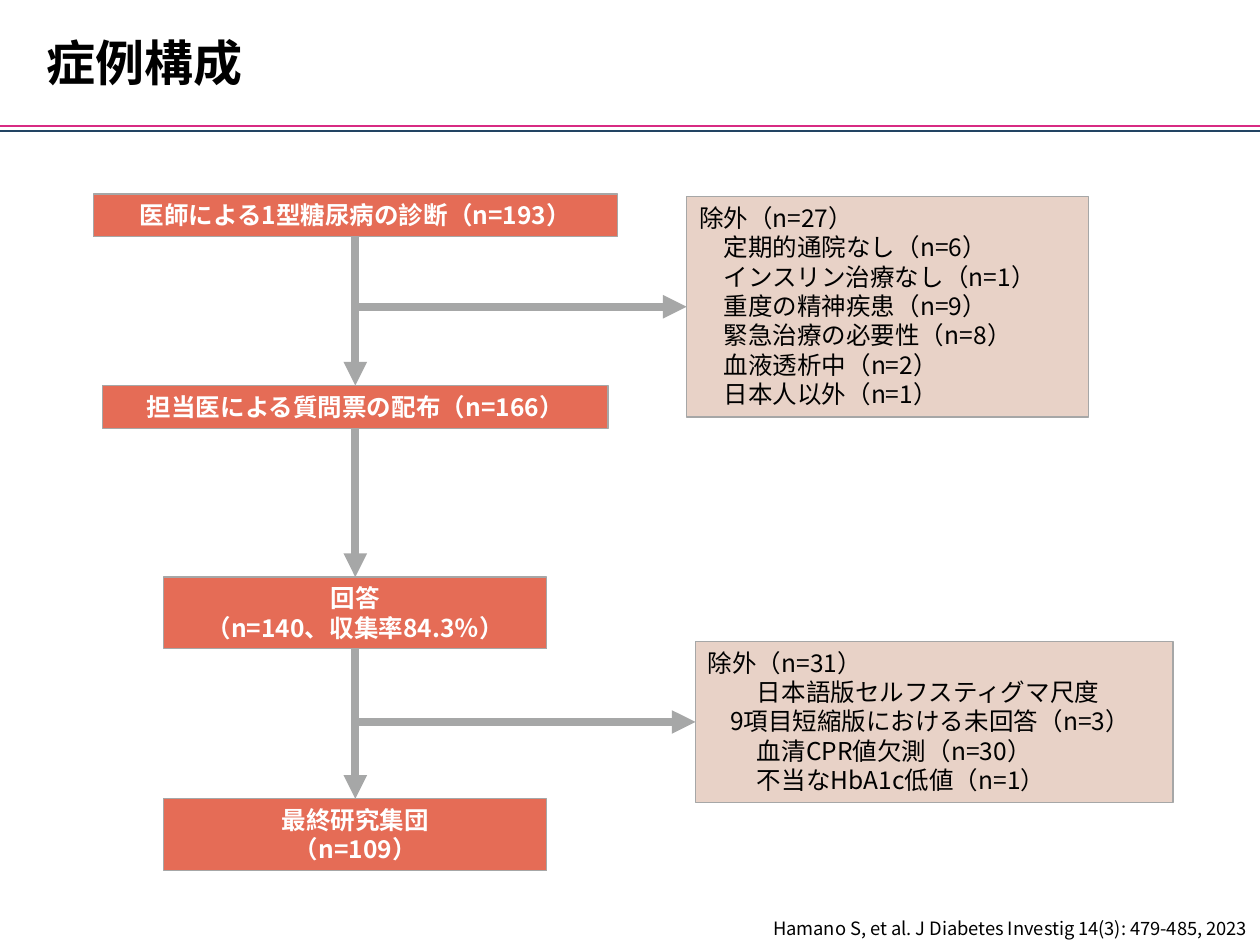
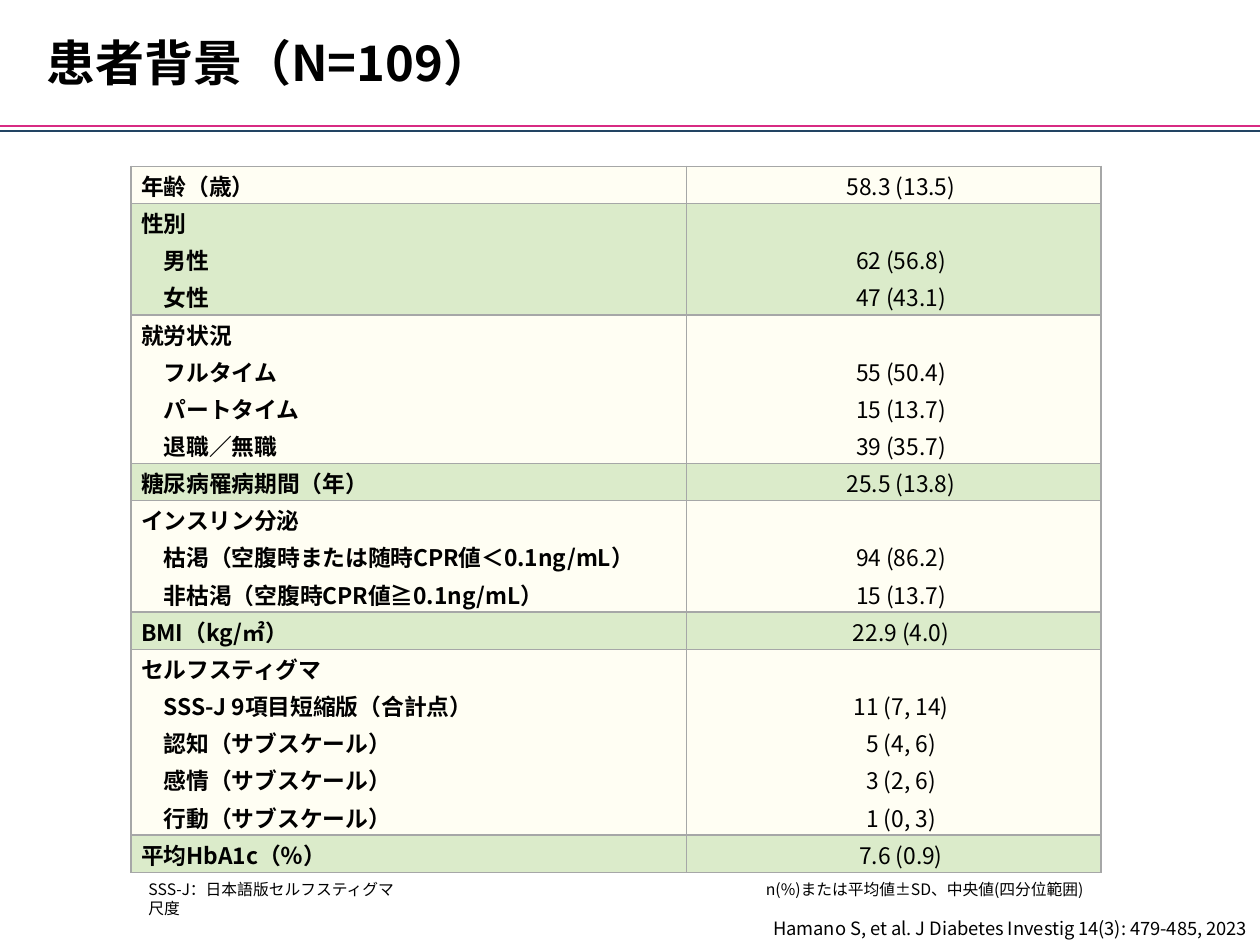
from lxml.etree import SubElement
from pptx import Presentation
from pptx.dml.color import RGBColor
from pptx.enum.shapes import MSO_CONNECTOR, MSO_SHAPE
from pptx.enum.text import MSO_ANCHOR, MSO_AUTO_SIZE, PP_ALIGN
from pptx.oxml.ns import qn
from pptx.util import Emu, Inches, Pt

# ---- Shared style ----
FONT = "Noto Sans CJK JP"
C = {"text": "000000", "white": "FFFFFF", "pink": "D82B83", "navy": "224463",
     "gray": "A6A7A7", "step": "E56C56", "excluded": "E8D2C7",
     "cream": "FFFEF3", "green": "DBEBCA"}
W, H = 10, 7.5
RULES = [(1.04, "navy"), (1, "pink")]
CITATION = "Hamano S, et al. J Diabetes Investig 14(3): 479-485, 2023"
TOP, LEFT, BOTTOM = 0, 1, 2  # connection sites

# ---- Slide 1: patient flow ----
FLOW_TITLE = ("症例構成", 1.77)
AXIS = 2.82  # centre of the flow column
STEPS = [  # top, width, height, lines
    (1.54, 4.16, 0.34, ["医師による1型糖尿病の診断（n=193）"]),
    (3.06, 4.01, 0.34, ["担当医による質問票の配布（n=166）"]),
    (4.58, 3.04, 0.57, ["回答", "（n=140、収集率84.3％）"]),
    (6.34, 3.04, 0.57, ["最終研究集団", "（n=109）"]),
]
EXCLUSIONS = [  # step left, box, (line, indent in characters)
    (0, (5.45, 1.56, 3.19, 1.75), [
        ("除外（n=27）", 0), ("定期的通院なし（n=6）", 1),
        ("インスリン治療なし（n=1）", 1), ("重度の精神疾患（n=9）", 1),
        ("緊急治療の必要性（n=8）", 1), ("血液透析中（n=2）", 1),
        ("日本人以外（n=1）", 1)]),
    (2, (5.52, 5.09, 3.79, 1.28), [
        ("除外（n=31）", 0), ("日本語版セルフスティグマ尺度", 2),
        ("9項目短縮版における未回答（n=3）", 0.9),
        ("血清CPR値欠測（n=30）", 2), ("不当なHbA1c低値（n=1）", 2)]),
]

# ---- Slide 2: patient background ----
TABLE_TITLE = ("患者背景（N=109）", 4)
GROUPS = [  # the first row of each group is its heading
    [("年齢（歳）", "58.3 (13.5)")],
    [("性別", ""), ("男性", "62 (56.8)"), ("女性", "47 (43.1)")],
    [("就労状況", ""), ("フルタイム", "55 (50.4)"),
     ("パートタイム", "15 (13.7)"), ("退職／無職", "39 (35.7)")],
    [("糖尿病罹病期間（年）", "25.5 (13.8)")],
    [("インスリン分泌", ""),
     ("枯渇（空腹時または随時CPR値＜0.1ng/mL）", "94 (86.2)"),
     ("非枯渇（空腹時CPR値≧0.1ng/mL）", "15 (13.7)")],
    [("BMI（kg/㎡）", "22.9 (4.0)")],
    [("セルフスティグマ", ""), ("SSS-J 9項目短縮版（合計点）", "11 (7, 14)"),
     ("認知（サブスケール）", "5 (4, 6)"), ("感情（サブスケール）", "3 (2, 6)"),
     ("行動（サブスケール）", "1 (0, 3)")],
    [("平均HbA1c（％）", "7.6 (0.9)")],
]
TABLE_BOX = (1.04, 1.32, 7.7, 5.61)
COLS = (4.41, 3.29)
NOTES = [  # left, width, text
    (5.98, 2.75, "n(%)または平均値±SD、中央値(四分位範囲)"),
    (1.08, 2.19, "SSS-J：日本語版セルフスティグマ尺度"),
]


def rgb(name):
    return RGBColor.from_string(C[name])


def write(tf, lines, size, color="text", bold=False, align=PP_ALIGN.LEFT):
    """Fill a text frame with (text, indent in characters) lines."""
    for i, (text, indent) in enumerate(lines):
        p = tf.paragraphs[0] if i == 0 else tf.add_paragraph()
        p.alignment = align
        if text:
            p.add_run().text = text
        else:
            p._p.get_or_add_endParaRPr().set("sz", str(size * 100))
        f = p.font
        f.size, f.bold, f.name = Pt(size), bold, FONT
        f.color.rgb = rgb(color)
        SubElement(f._element, qn("a:ea")).set("typeface", FONT)
        if indent:
            p._p.get_or_add_pPr().set("marL", str(Pt(size * indent)))
            p._p.pPr.set("indent", "0")


def add_text(s, box, text, size, anchor=MSO_ANCHOR.TOP, wrap=True, **style):
    tf = s.shapes.add_textbox(*map(Inches, box)).text_frame
    tf.word_wrap, tf.vertical_anchor = wrap, anchor
    write(tf, [(text, 0)], size, **style)


def add_box(s, box, fill, lines, **style):
    sp = s.shapes.add_shape(MSO_SHAPE.RECTANGLE, *map(Inches, box))
    sp.shadow.inherit = False
    sp.fill.solid()
    sp.fill.fore_color.rgb = rgb(fill)
    sp.line.color.rgb, sp.line.width = rgb("gray"), Pt(0.75)
    tf = sp.text_frame
    tf.word_wrap, tf.vertical_anchor = True, MSO_ANCHOR.TOP
    tf.auto_size = MSO_AUTO_SIZE.SHAPE_TO_FIT_TEXT
    write(tf, lines, 14, **style)
    return sp


def add_line(s, ends, color, width, kind=MSO_CONNECTOR.STRAIGHT):
    ln = s.shapes.add_connector(kind, *map(Inches, ends))
    ln.line.color.rgb, ln.line.width = rgb(color), Pt(width)
    SubElement(ln._element.spPr, qn("a:effectLst"))
    return ln


def add_arrow(s, source, target, site, kind=MSO_CONNECTOR.STRAIGHT):
    ln = add_line(s, (0, 0, 1, 1), "gray", 4.5, kind)
    SubElement(ln.line._get_or_add_ln(), qn("a:tailEnd")).set("type", "triangle")
    ln.begin_connect(source, BOTTOM)
    ln.end_connect(target, site)
    return ln


def add_branch(s, source, target):
    """One-bend arrow: down from source, then right into target."""
    ln = add_arrow(s, source, target, LEFT, MSO_CONNECTOR.ELBOW)
    x, y = ln.begin_x, ln.begin_y
    dx, dy = ln.end_x - x, ln.end_y - y
    # The one-bend preset is laid out on its side and turned by 270 degrees
    ln.left, ln.top = Emu(x + (dx - dy) // 2), Emu(y + (dy - dx) // 2)
    ln.width, ln.height = Emu(dy), Emu(dx)
    xfrm = ln._element.spPr.find(qn("a:xfrm"))
    xfrm.set("rot", str(270 * 60000))
    xfrm.set("flipH", "1")
    ln._element.spPr.find(qn("a:prstGeom")).set("prst", "bentConnector2")


def new_slide(prs, title, title_width):
    s = prs.slides.add_slide(prs.slide_layouts[6])
    for y, color in RULES:
        add_line(s, (0, y, W, y), color, 1.5)
    add_text(s, (0.27, 0.21, title_width, 0.57), title, 28,
             MSO_ANCHOR.MIDDLE, wrap=False, bold=True)
    add_text(s, (4.89, H - 0.28, W - 4.89, 0.28), CITATION, 10.5,
             MSO_ANCHOR.BOTTOM, align=PP_ALIGN.RIGHT)
    return s


def set_borders(cell, sides):
    """Draw the named sides (L, R, T, B) and clear the others."""
    tcPr = cell._tc.get_or_add_tcPr()
    for i, side in enumerate("LRTB"):
        ln = SubElement(tcPr, qn(f"a:ln{side}"))
        if side in sides:
            ln.set("w", str(Pt(1)))
            fill = SubElement(ln, qn("a:solidFill"))
            SubElement(fill, qn("a:srgbClr")).set("val", C["gray"])
        else:
            SubElement(ln, qn("a:noFill"))
        tcPr.insert(i, ln)


def build_flow(prs):
    s = new_slide(prs, *FLOW_TITLE)
    steps = [add_box(s, (AXIS - w / 2, y, w, h), "step",
                     [(line, 0) for line in lines],
                     color="white", bold=True, align=PP_ALIGN.CENTER)
             for y, w, h, lines in STEPS]
    for upper, lower in zip(steps, steps[1:]):
        add_arrow(s, upper, lower, TOP)
    for i, box, lines in EXCLUSIONS:
        add_branch(s, steps[i], add_box(s, box, "excluded", lines))


def build_background(prs):
    s = new_slide(prs, *TABLE_TITLE)
    count = sum(map(len, GROUPS))
    table = s.shapes.add_table(count, 2, *map(Inches, TABLE_BOX)).table
    table.first_row = table.horz_banding = False
    for col, width in zip(table.columns, COLS):
        col.width = Inches(width)
    for row in table.rows:
        row.height = Inches(TABLE_BOX[3] / count)

    # Groups alternate in colour; lines run only around each group
    r = 0
    for g, group in enumerate(GROUPS):
        for i, values in enumerate(group):
            sides = "LR" + "T" * (i == 0) + "B" * (i == len(group) - 1)
            for c, text in enumerate(values):
                cell = table.cell(r, c)
                cell.fill.solid()
                cell.fill.fore_color.rgb = rgb(("cream", "green")[g % 2])
                cell.vertical_anchor = MSO_ANCHOR.MIDDLE
                cell.margin_left = Inches((0.08, 0.12)[c])
                cell.margin_right = cell.margin_top = Inches(0.01)
                cell.margin_bottom = 0
                set_borders(cell, sides)
                write(cell.text_frame, [(text, int(c == 0 and i > 0))], 13,
                      bold=c == 0,
                      align=(PP_ALIGN.LEFT, PP_ALIGN.CENTER)[c])
            r += 1

    for x, w, text in NOTES:
        add_text(s, (x, TABLE_BOX[1] + TABLE_BOX[3], w, 0.25), text, 9)


def main():
    prs = Presentation()
    prs.slide_width, prs.slide_height = Inches(W), Inches(H)
    build_flow(prs)
    build_background(prs)
    prs.save("out.pptx")


if __name__ == "__main__":
    main()
